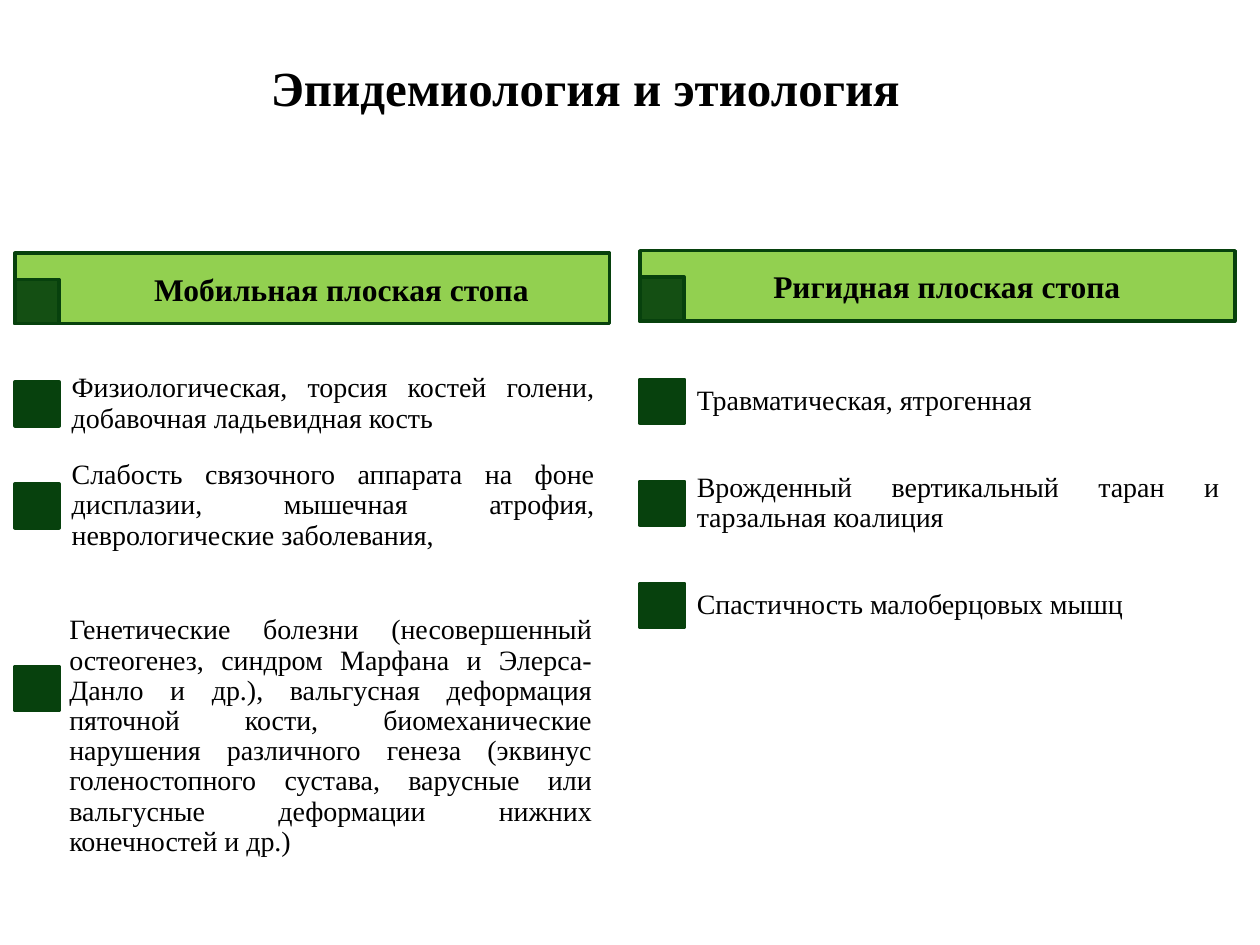
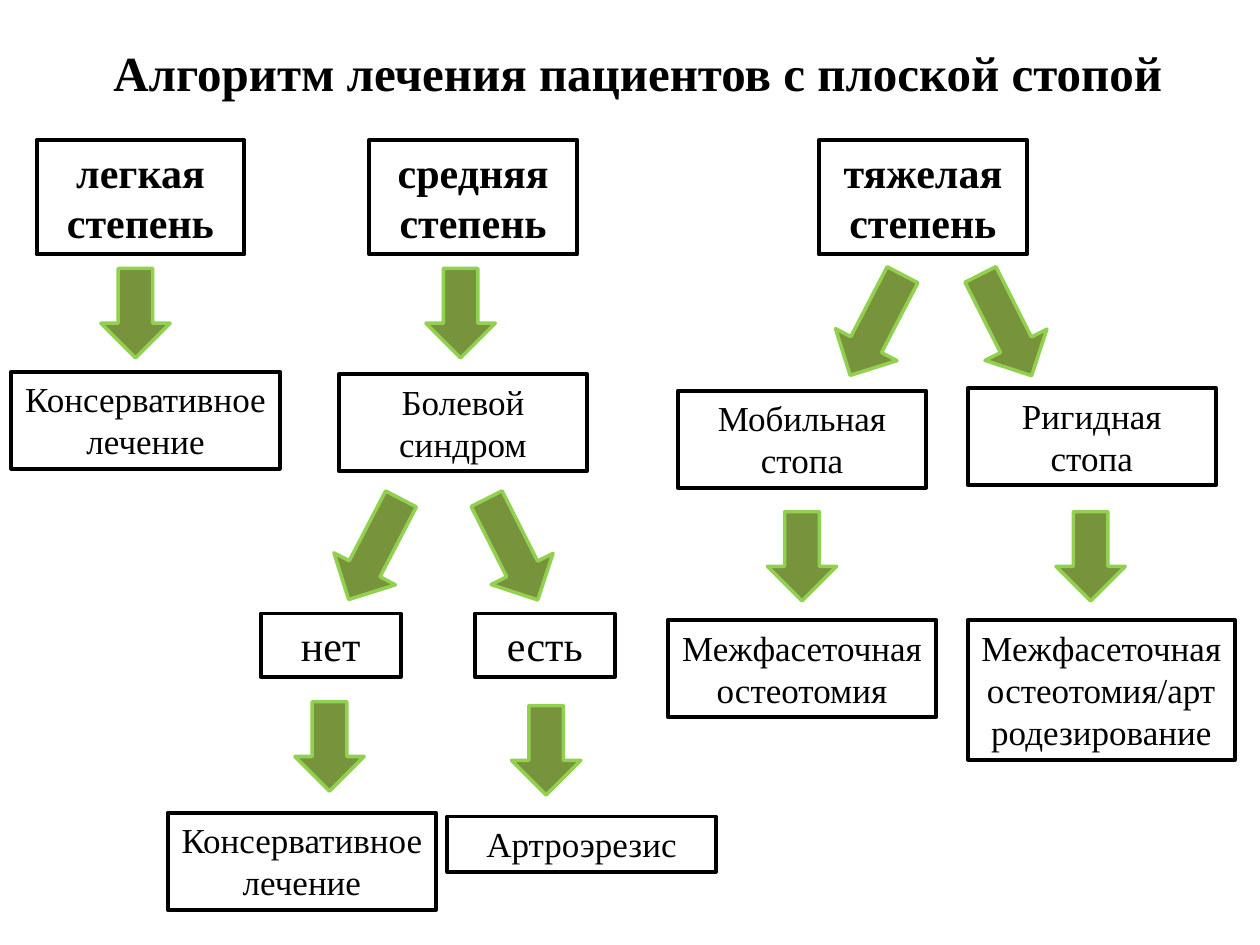
from dataclasses import dataclass

import pptx
import pptx.dml.color
import pptx.enum.shapes
import pptx.enum.text
import pptx.oxml
import pptx.oxml.ns
import pptx.util
from pptx.util import Pt

FONT = "Times New Roman"
BLACK = "000000"
LIME = "92D050"
OLIVE = "77933C"
DARK_GREEN = "07410D"

SHAPE = pptx.enum.shapes.MSO_SHAPE
ALIGN = pptx.enum.text.PP_ALIGN
ANCHOR = pptx.enum.text.MSO_ANCHOR

MARKER_SIZE = 25.2
BAR_WIDTH, BAR_HEIGHT = 339.8, 40.3
ROW_HEIGHT = 58.3
FIRST_ROW_OFFSET = 56.9
STRAIGHT, LEFTWARD, RIGHTWARD = 0, 27.5, 333.2


@dataclass(frozen=True)
class Area:
    left: float
    top: float
    width: float
    height: float

    def lengths(self) -> tuple:
        return Pt(self.left), Pt(self.top), Pt(self.width), Pt(self.height)


@dataclass(frozen=True)
class Cause:
    text: str
    marker_top: float
    area: Area


@dataclass(frozen=True)
class Column:
    heading: str
    left: float
    top: float
    heading_area: Area
    causes: list


@dataclass(frozen=True)
class BoxStyle:
    width: float
    height: float
    size: float = 20
    bold: bool = False


@dataclass(frozen=True)
class Box:
    text: str
    left: float
    top: float
    style: BoxStyle


@dataclass(frozen=True)
class Arrow:
    left: float
    top: float
    rotation: float = STRAIGHT


def color(value: str) -> pptx.dml.color.RGBColor:
    return pptx.dml.color.RGBColor.from_string(value)


def write(shape, text: str, size: float, bold: bool = False, align=ALIGN.CENTER,
          anchor=ANCHOR.TOP, spacing: float = 1.0, insets: tuple = (7.2, 3.6)) -> None:
    frame = shape.text_frame
    frame.word_wrap = True
    frame.auto_size = pptx.enum.text.MSO_AUTO_SIZE.NONE
    frame.vertical_anchor = anchor
    frame.margin_left = frame.margin_right = Pt(insets[0])
    frame.margin_top = frame.margin_bottom = Pt(insets[1])
    frame.text = text
    paragraph = frame.paragraphs[0]
    paragraph.alignment = align
    paragraph.line_spacing = spacing
    paragraph.font.name = FONT
    paragraph.font.size = Pt(size)
    paragraph.font.bold = bold
    paragraph.font.color.rgb = color(BLACK)


def add_titled_slide(presentation, title: str, area: Area, align):
    slide = presentation.slides.add_slide(presentation.slide_layouts[5])
    shape = slide.shapes.title
    shape.left, shape.top, shape.width, shape.height = area.lengths()
    write(shape, title, 28, bold=True, align=align)
    return slide


def add_outlined(slide, kind, area: Area, fill: str | None, line: str, weight: float):
    shape = slide.shapes.add_shape(kind, *area.lengths())
    shape.shadow.inherit = False
    if fill is None:
        shape.fill.background()
    else:
        shape.fill.solid()
        shape.fill.fore_color.rgb = color(fill)
    shape.line.color.rgb = color(line)
    shape.line.width = Pt(weight)
    return shape


def add_marker(slide, left: float, top: float):
    area = Area(left, top, MARKER_SIZE, MARKER_SIZE)
    return add_outlined(slide, SHAPE.RECTANGLE, area, DARK_GREEN, DARK_GREEN, 2)


def set_opacity(shape, percent: int) -> None:
    fill_color = shape.fill._xPr.find(pptx.oxml.ns.qn("a:solidFill"))[0]
    alpha = pptx.oxml.parse_xml(
        f'<a:alpha {pptx.oxml.ns.nsdecls("a")} val="{percent * 1000}"/>')
    fill_color.append(alpha)


def regular_causes(left: float, top: float, texts: list) -> list:
    """Stack causes in equal rows with each marker centred on its row."""
    causes = []
    for index, text in enumerate(texts):
        row_top = top + FIRST_ROW_OFFSET + index * ROW_HEIGHT
        marker_top = row_top + (ROW_HEIGHT - MARKER_SIZE) / 2
        causes.append(Cause(text, marker_top, Area(left + 23.8, row_top, 316, ROW_HEIGHT)))
    return causes


def add_column(slide, column: Column) -> None:
    bar = Area(column.left, column.top, BAR_WIDTH, BAR_HEIGHT)
    add_outlined(slide, SHAPE.RECTANGLE, bar, LIME, DARK_GREEN, 2)
    corner = add_marker(slide, column.left, column.top + BAR_HEIGHT - MARKER_SIZE)
    set_opacity(corner, 90)
    heading = slide.shapes.add_textbox(*column.heading_area.lengths())
    write(heading, column.heading, 18, bold=True, anchor=ANCHOR.MIDDLE,
          spacing=0.9, insets=(2.9, 2.2))
    for cause in column.causes:
        add_marker(slide, column.left, cause.marker_top)
        label = slide.shapes.add_textbox(*cause.area.lengths())
        write(label, cause.text, 16, align=ALIGN.JUSTIFY, anchor=ANCHOR.MIDDLE,
              spacing=0.9, insets=(8.6, 8.6))


def add_box(slide, box: Box) -> None:
    area = Area(box.left, box.top, box.style.width, box.style.height)
    shape = add_outlined(slide, SHAPE.RECTANGLE, area, None, BLACK, 2.25)
    write(shape, box.text, box.style.size, box.style.bold)


def add_arrow(slide, arrow: Arrow) -> None:
    height = 51.1 if arrow.rotation == STRAIGHT else 64.8
    area = Area(arrow.left, arrow.top, 39.6, height)
    shape = add_outlined(slide, SHAPE.DOWN_ARROW, area, OLIVE, LIME, 2)
    shape.rotation = arrow.rotation


def build_etiology(presentation) -> None:
    slide = add_titled_slide(presentation, "Эпидемиология и этиология",
                             Area(141.8, 29.5, 385.2, 41), ALIGN.CENTER)
    mobile_left, mobile_top = 8.6, 144.7
    rigid_left, rigid_top = 365.8, 143.3
    mobile_causes = regular_causes(mobile_left, mobile_top, [
        "Физиологическая, торсия костей голени, добавочная ладьевидная кость",
        "Слабость связочного аппарата на фоне дисплазии, мышечная атрофия, "
        "неврологические заболевания,",
    ])
    mobile_causes.append(Cause(
        "Генетические болезни (несовершенный остеогенез, синдром Марфана и "
        "Элерса-Данло и др.), вальгусная деформация пяточной кости, "
        "биомеханические нарушения различного генеза (эквинус голеностопного "
        "сустава, варусные или вальгусные деформации нижних конечностей и др.)",
        380.9, Area(31, 345.6, 316, 150.5)))
    rigid_causes = regular_causes(rigid_left, rigid_top, [
        "Травматическая, ятрогенная",
        "Врожденный вертикальный таран и тарзальная коалиция",
        "Спастичность малоберцовых мышц",
    ])
    add_column(slide, Column("Мобильная плоская стопа", mobile_left, mobile_top,
                             Area(42.5, 145.4, 305.3, 41.8), mobile_causes))
    add_column(slide, Column("Ригидная плоская стопа", rigid_left, rigid_top,
                             Area(399.6, 145.4, 283, 38.2), rigid_causes))


def build_algorithm(presentation) -> None:
    slide = add_titled_slide(presentation, "Алгоритм лечения пациентов с плоской стопой",
                             Area(57.6, 20.9, 631.4, 41), ALIGN.LEFT)
    grade = BoxStyle(118.8, 65.5, 24, True)
    finding = BoxStyle(141.8, 55.5)
    answer = BoxStyle(80, 36.2, 24)
    treatment = BoxStyle(153.4, 55.5)
    short_treatment = BoxStyle(153.4, 31.7)
    tall_treatment = BoxStyle(152.7, 79.9)
    boxes = [
        Box("легкая степень", 20.9, 79.9, grade),
        Box("средняя степень", 211, 79.9, grade),
        Box("тяжелая степень", 468, 79.9, grade),
        Box("Консервативное лечение", 6.5, 212.4, treatment),
        Box("Болевой синдром", 193.7, 213.8, finding),
        Box("Мобильная стопа", 387.4, 223.2, finding),
        Box("Ригидная стопа", 553, 221.8, finding),
        Box("нет", 149, 350.6, answer),
        Box("есть", 271.4, 350.6, answer),
        Box("Консервативное лечение", 95.8, 464.4, treatment),
        Box("Артроэрезис", 255.6, 466.6, short_treatment),
        Box("Межфасеточная остеотомия", 381.6, 354.2, treatment),
        Box("Межфасеточная остеотомия/артродезирование", 553, 354.2, tall_treatment),
    ]
    arrows = [
        Arrow(57.6, 153.4),
        Arrow(243.4, 153.4),
        Arrow(481, 153.4, LEFTWARD),
        Arrow(555.1, 153.4, RIGHTWARD),
        Arrow(194.4, 281.5, LEFTWARD),
        Arrow(272.9, 281.5, RIGHTWARD),
        Arrow(438.5, 292.3),
        Arrow(603.4, 292.3),
        Arrow(168.5, 401),
        Arrow(292.3, 403.2),
    ]
    for box in boxes:
        add_box(slide, box)
    for arrow in arrows:
        add_arrow(slide, arrow)


def main() -> None:
    presentation = pptx.Presentation()
    presentation.slide_width = Pt(720)
    presentation.slide_height = Pt(540)
    build_etiology(presentation)
    build_algorithm(presentation)
    presentation.save("out.pptx")


if __name__ == "__main__":
    main()
